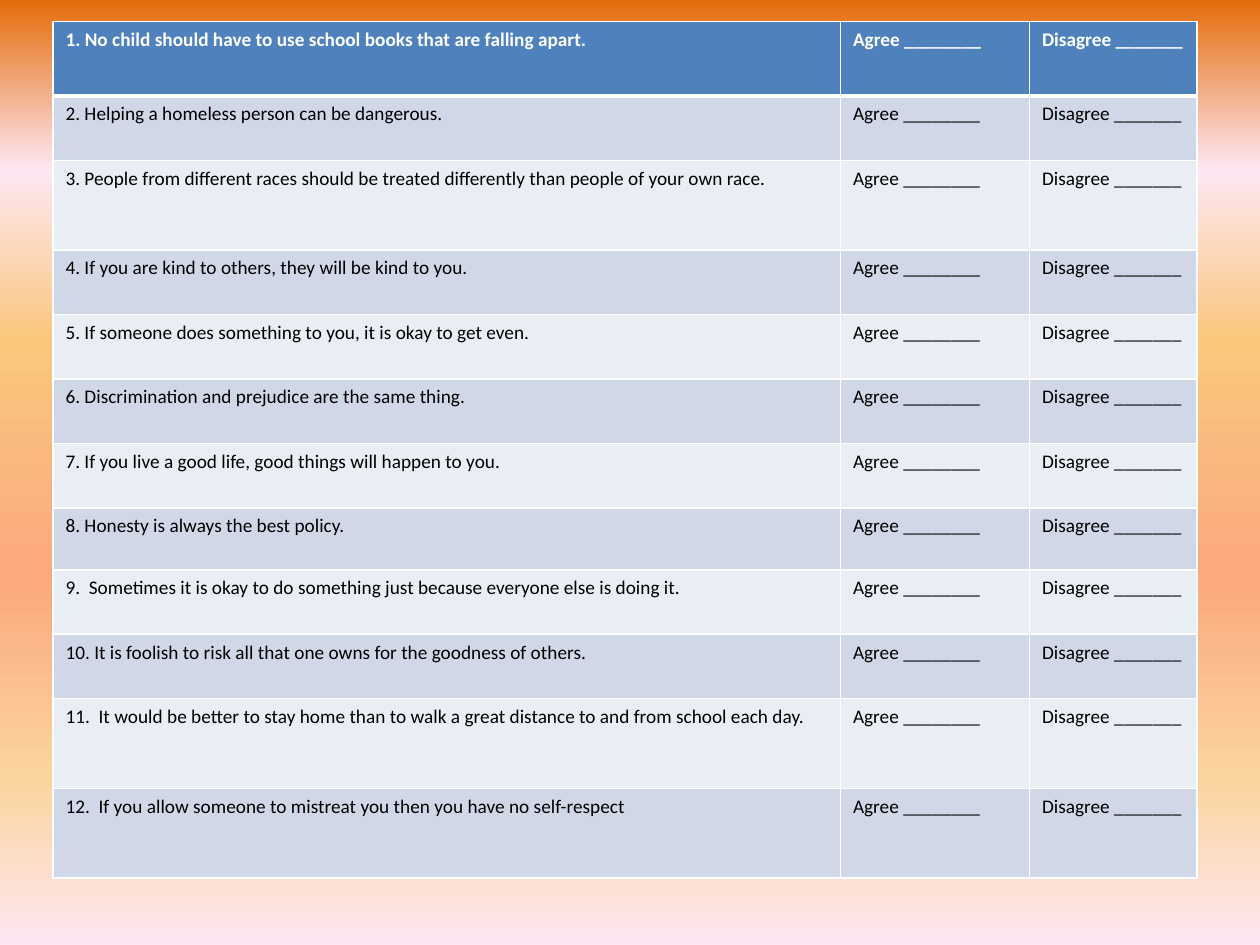
from lxml.etree import SubElement
from pptx import Presentation
from pptx.dml.color import RGBColor
from pptx.oxml.ns import qn
from pptx.util import Inches, Pt

WIDTH, HEIGHT = 10, 7.5
TABLE_BOX = (0.42, 0.17, 9.08, 6.8)
COLUMN_WIDTHS = (6.25, 1.5, 1.33)
HEADER_ROW, SHORT_ROW, ROW, TALL_ROW = 0.59, 0.49, 0.51, 0.71
BACKDROP = ((0, "E46C0A"), (18, "FEE7F2"), (36, "FAC77D"),
            (61, "FBA97D"), (82, "FBD49C"), (100, "FEE7F2"))
HEADER_FILL, BAND_FILLS = "4F81BD", ("E9EDF4", "D0D8E8")
CHOICES = ("Agree ________", "Disagree _______")
STATEMENTS = (
    ("1. No child should have to use school books that are falling apart.", HEADER_ROW),
    ("2. Helping a homeless person can be dangerous.", ROW),
    ("3. People from different races should be treated differently than people of your own race.", TALL_ROW),
    ("4. If you are kind to others, they will be kind to you.", ROW),
    ("5. If someone does something to you, it is okay to get even.", ROW),
    ("6. Discrimination and prejudice are the same thing.", ROW),
    ("7. If you live a good life, good things will happen to you.", ROW),
    ("8. Honesty is always the best policy.", SHORT_ROW),
    ("9.  Sometimes it is okay to do something just because everyone else is doing it.", ROW),
    ("10. It is foolish to risk all that one owns for the goodness of others.", ROW),
    ("11.  It would be better to stay home than to walk a great distance to and from school each day.", TALL_ROW),
    ("12.  If you allow someone to mistreat you then you have no self-respect", TALL_ROW),
)


def color(hex_value):
    """Turn a hex string into a colour."""
    return RGBColor.from_string(hex_value)


def paint_backdrop(page, stops):
    """Fill the page background with a top-to-bottom gradient."""
    fill = page.background.fill
    fill.gradient()
    fill.gradient_angle = 270
    stop_list = next(page.element.iter(qn("a:gsLst")))
    for old_stop in list(stop_list):
        stop_list.remove(old_stop)
    for percent, hex_value in stops:
        stop = SubElement(stop_list, qn("a:gs"), pos=str(percent * 1000))
        SubElement(stop, qn("a:srgbClr"), val=hex_value)


def add_borders(cell, widths):
    """Draw white borders with the given point width for each side."""
    properties = cell._tc.get_or_add_tcPr()
    for side, width in widths.items():
        line = SubElement(properties, qn(f"a:ln{side}"), w=str(Pt(width)))
        solid = SubElement(line, qn("a:solidFill"))
        SubElement(solid, qn("a:srgbClr"), val="FFFFFF")


def fill_cell(cell, text, row_index):
    """Write and format one cell according to its row."""
    is_header = row_index == 0
    add_borders(cell, {"L": 1, "R": 1, "T": 3 if row_index == 1 else 1,
                       "B": 3 if is_header else 1})
    cell.fill.solid()
    cell.fill.fore_color.rgb = color(HEADER_FILL if is_header else BAND_FILLS[row_index % 2])
    span = cell.text_frame.paragraphs[0].add_run()
    span.text = text
    for name, value in {"name": "Calibri", "size": Pt(11), "bold": is_header}.items():
        setattr(span.font, name, value)
    span.font.color.rgb = color("FFFFFF" if is_header else "000000")


def add_survey(page, box):
    """Place the agree or disagree table in the given box."""
    frame = page.shapes.add_table(len(STATEMENTS), len(COLUMN_WIDTHS), *map(Inches, box))
    table = frame.table
    row_scale = box[3] / sum(height for _, height in STATEMENTS)
    for column, width in zip(table.columns, COLUMN_WIDTHS):
        column.width = Inches(box[2] * width / sum(COLUMN_WIDTHS))
    for row_index, (statement, height) in enumerate(STATEMENTS):
        table.rows[row_index].height = Inches(height * row_scale)
        for column_index, text in enumerate((statement, *CHOICES)):
            fill_cell(table.cell(row_index, column_index), text, row_index)


def main():
    """Build the survey deck and save it."""
    deck = Presentation()
    deck.slide_width, deck.slide_height = Inches(WIDTH), Inches(HEIGHT)
    page = deck.slides.add_slide(deck.slide_layouts[6])
    paint_backdrop(page, BACKDROP)
    add_survey(page, TABLE_BOX)
    deck.save("out.pptx")


if __name__ == "__main__":
    main()
